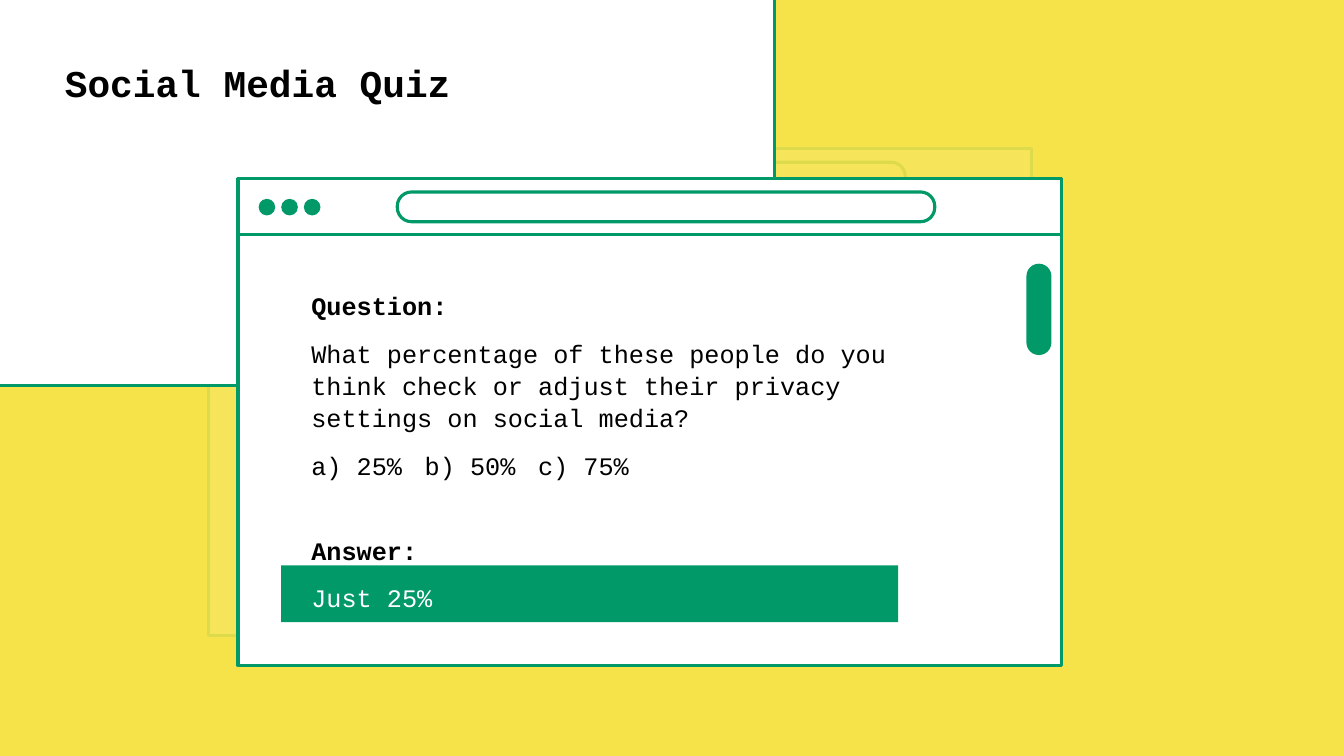
from pptx import Presentation
from pptx.dml.color import RGBColor
from pptx.enum.shapes import MSO_SHAPE as Shape
from pptx.oxml.ns import qn
from pptx.util import Cm, Pt
from lxml.etree import SubElement

COLORS = {"yellow": "F6E249", "green": "019967", "white": "FFFFFF", "black": "000000"}
FONT = "Courier New"

TITLE = "Social Media Quiz"
# text, bold, colour
QUESTION = [
    ("Question:", True, "black"),
    ("What percentage of these people do you think check or adjust "
     "their privacy settings on social media?", False, "black"),
    ("a) 25%\tb) 50%\tc) 75%", False, "black"),
]
ANSWER = [("Answer:", True, "black"), ("Just 25%", False, "white")]

SLIDE_W, SLIDE_H = 45.16, 25.4
WINDOW_W, WINDOW_H, BAR_H = 27.66, 16.36, 1.88
BACK_WINDOW, FRONT_WINDOW = (7.01, 5.0), (8.0, 6.0)
TEXT_LEFT, TEXT_W = 10.13, 22.76
DOT_SIZE, DOT_STEP = 0.56, 0.76


def color(name):
    return RGBColor.from_string(COLORS[name])


def add_box(left, top, width, height, fill=None, line_width=None,
            kind=Shape.RECTANGLE, rounding=None):
    box = slide.shapes.add_shape(kind, Cm(left), Cm(top), Cm(width), Cm(height))
    box.shadow.inherit = False
    if rounding is not None:
        box.adjustments[0] = rounding
    if fill:
        box.fill.solid()
        box.fill.fore_color.rgb = color(fill)
    else:
        box.fill.background()
    if line_width:
        box.line.color.rgb = color("green")
        box.line.width = Pt(line_width)
    else:
        box.line.fill.background()
    return box


def add_browser(left, top):
    """Window frame with its title bar and address field."""
    add_box(left, top, WINDOW_W, WINDOW_H, "white", 3)
    add_box(left, top, WINDOW_W, BAR_H, "white", 3)
    add_box(left + 5.35, top + 0.45, 18.06, 1.0, None, 3,
            Shape.ROUNDED_RECTANGLE, 0.48)


def add_text(left, top, width, height, lines, size, inset, space_after=0):
    frame = slide.shapes.add_textbox(Cm(left), Cm(top), Cm(width), Cm(height)).text_frame
    frame.word_wrap = True
    frame.margin_left = frame.margin_right = Cm(inset[0])
    frame.margin_top = frame.margin_bottom = Cm(inset[1])
    for i, (text, bold, ink) in enumerate(lines):
        paragraph = frame.paragraphs[0] if i == 0 else frame.add_paragraph()
        paragraph.text = text
        paragraph.line_spacing = 1.06
        paragraph.space_after = Pt(space_after)
        paragraph.font.name = FONT
        paragraph.font.size = Pt(size)
        paragraph.font.bold = bold
        paragraph.font.color.rgb = color(ink)


prs = Presentation()
prs.slide_width, prs.slide_height = Cm(SLIDE_W), Cm(SLIDE_H)
slide = prs.slides.add_slide(prs.slide_layouts[6])
slide.background.fill.solid()
slide.background.fill.fore_color.rgb = color("yellow")

# Faded window behind a translucent veil
add_browser(*BACK_WINDOW)
veil = add_box(0, 0, SLIDE_W, SLIDE_H, "yellow")
veil_color = veil.fill._xPr.find(qn("a:solidFill"))[0]
SubElement(veil_color, qn("a:alpha"), val="90000")

# Title panel
add_box(-1.63, -0.64, WINDOW_W, 13.59, "white", 2.75)
add_text(1.93, 1.8, 13.87, 1.47, [(TITLE, True, "black")], 36, (0.25, 0.13))

# Front window with scroll bar and buttons
left, top = FRONT_WINDOW
add_browser(left, top)
add_box(left + 26.49, top + 2.86, 0.84, 3.07, "green",
        kind=Shape.ROUNDED_RECTANGLE, rounding=0.5)
for i in range(3):
    add_box(left + 0.69 + i * DOT_STEP, top + 0.68, DOT_SIZE, DOT_SIZE, "green",
            kind=Shape.OVAL)

# Question and answer
add_text(TEXT_LEFT, 9.53, TEXT_W, 6.65, QUESTION, 24, (0.33, 0.18), 15)
add_box(9.45, 19.0, 20.73, 1.9, "green")
add_text(TEXT_LEFT, 17.73, TEXT_W, 2.77, ANSWER, 24, (0.33, 0.18), 15)

prs.save("out.pptx")
